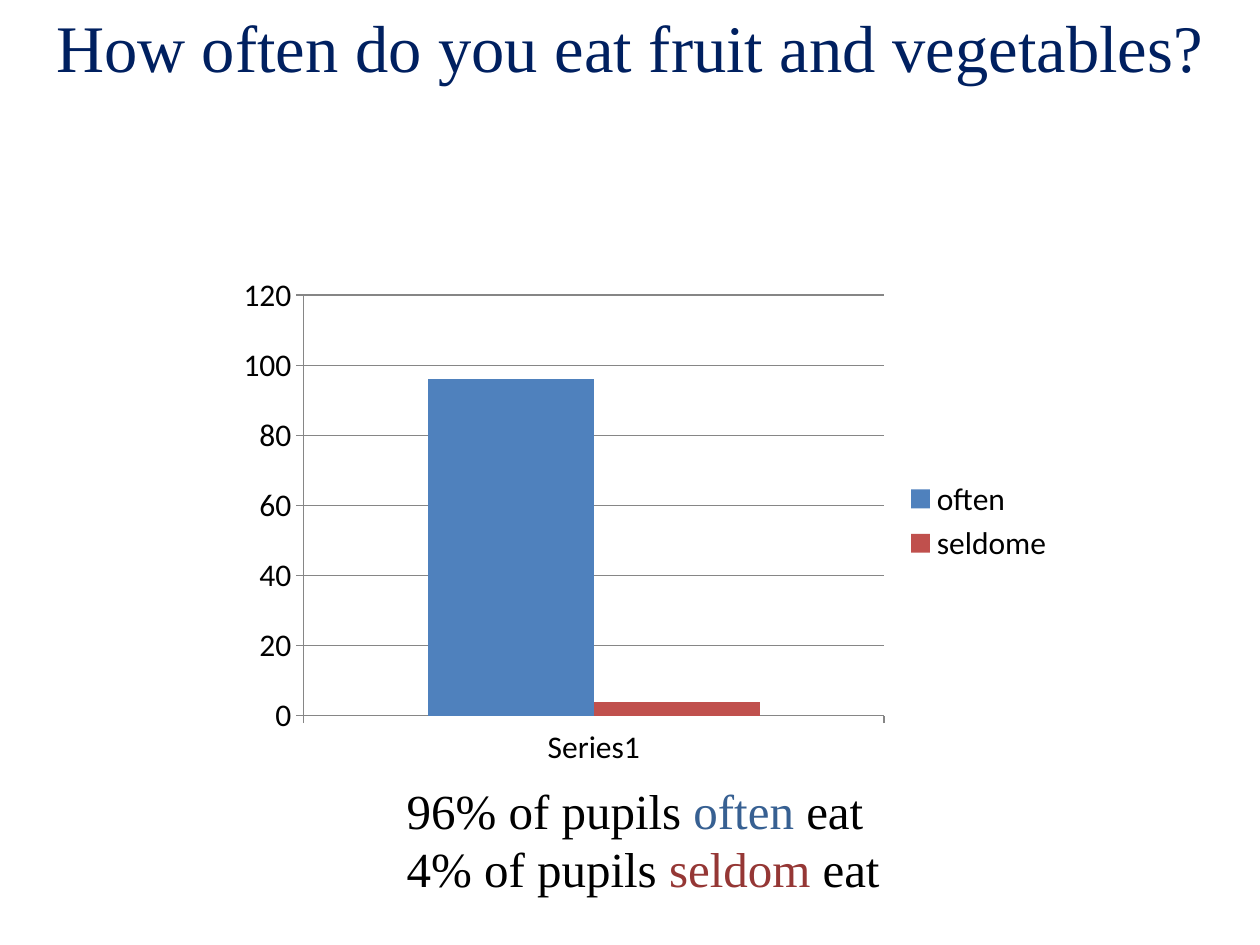
import dataclasses

import pptx
import pptx.chart.data
import pptx.dml.color
import pptx.enum.chart
import pptx.enum.text
import pptx.util

COLORS = {
    "title": "002060",
    "text": "000000",
    "axis": "868686",
    "often": "4F81BD",
    "seldom": "C0504D",
    "often_word": "376092",
    "seldom_word": "953735",
}
SERIF = "Times New Roman"


@dataclasses.dataclass(frozen=True)
class Answer:
    legend: str
    percent: int
    color: str
    before: str
    word: str
    after: str
    word_color: str


ANSWERS = [
    Answer("often", 96, "often", "96% of pupils ", "often ", "eat", "often_word"),
    Answer("seldome", 4, "seldom", "4% of pupils ", "seldom", " eat", "seldom_word"),
]


def rgb(name: str) -> pptx.dml.color.RGBColor:
    return pptx.dml.color.RGBColor.from_string(COLORS[name])


def box(left: float, top: float, width: float, height: float) -> list:
    return [pptx.util.Cm(length) for length in (left, top, width, height)]


def style(font, size: float, color: str, name: str = SERIF) -> None:
    font.name = name
    font.size = pptx.util.Pt(size)
    font.color.rgb = rgb(color)


def add_title(slide) -> None:
    title = slide.shapes.title
    title.left, title.top, title.width, title.height = box(0, 0, 25.4, 1.88)
    title.text_frame.text = "How often do you eat fruit and vegetables?"
    title.text_frame.vertical_anchor = pptx.enum.text.MSO_ANCHOR.TOP
    heading = title.text_frame.paragraphs[0]
    heading.alignment = pptx.enum.text.PP_ALIGN.CENTER
    style(heading.runs[0].font, 38, "title")


def add_survey_chart(slide) -> None:
    survey = pptx.chart.data.CategoryChartData(number_format="0")
    survey.categories = ["Series1"]
    for answer in ANSWERS:
        survey.add_series(answer.legend, [answer.percent])
    chart = slide.shapes.add_chart(
        pptx.enum.chart.XL_CHART_TYPE.COLUMN_CLUSTERED,
        *box(4.57, 5.36, 16.94, 10.29),
        survey,
    ).chart
    style(chart.font, 18, "text", "Calibri")
    chart.has_title = False
    chart.has_legend = True
    chart.legend.position = pptx.enum.chart.XL_LEGEND_POSITION.RIGHT
    chart.legend.include_in_layout = False

    columns = chart.plots[0]
    columns.gap_width = 150
    columns.overlap = 0
    columns.vary_by_categories = False
    for series, answer in zip(columns.series, ANSWERS):
        series.format.fill.solid()
        series.format.fill.fore_color.rgb = rgb(answer.color)

    percents = chart.value_axis
    percents.minimum_scale, percents.maximum_scale, percents.major_unit = 0, 120, 20
    percents.has_major_gridlines = True
    for part in (percents, percents.major_gridlines, chart.category_axis):
        part.format.line.color.rgb = rgb("axis")
        part.format.line.width = pptx.util.Pt(0.75)


def add_summary(slide) -> None:
    frame = slide.shapes.add_textbox(*box(7.95, 15.6, 12.7, 2.64)).text_frame
    frame.word_wrap = True
    for index, answer in enumerate(ANSWERS):
        line = frame.add_paragraph() if index else frame.paragraphs[0]
        for words, color in (
            (answer.before, "text"),
            (answer.word, answer.word_color),
            (answer.after, "text"),
        ):
            run = line.add_run()
            run.text = words
            style(run.font, 28, color)


def main() -> None:
    deck = pptx.Presentation()
    deck.slide_width = pptx.util.Cm(25.4)
    deck.slide_height = pptx.util.Cm(19.05)
    slide = deck.slides.add_slide(deck.slide_layouts[5])
    add_title(slide)
    add_survey_chart(slide)
    add_summary(slide)
    deck.save("out.pptx")


if __name__ == "__main__":
    main()
